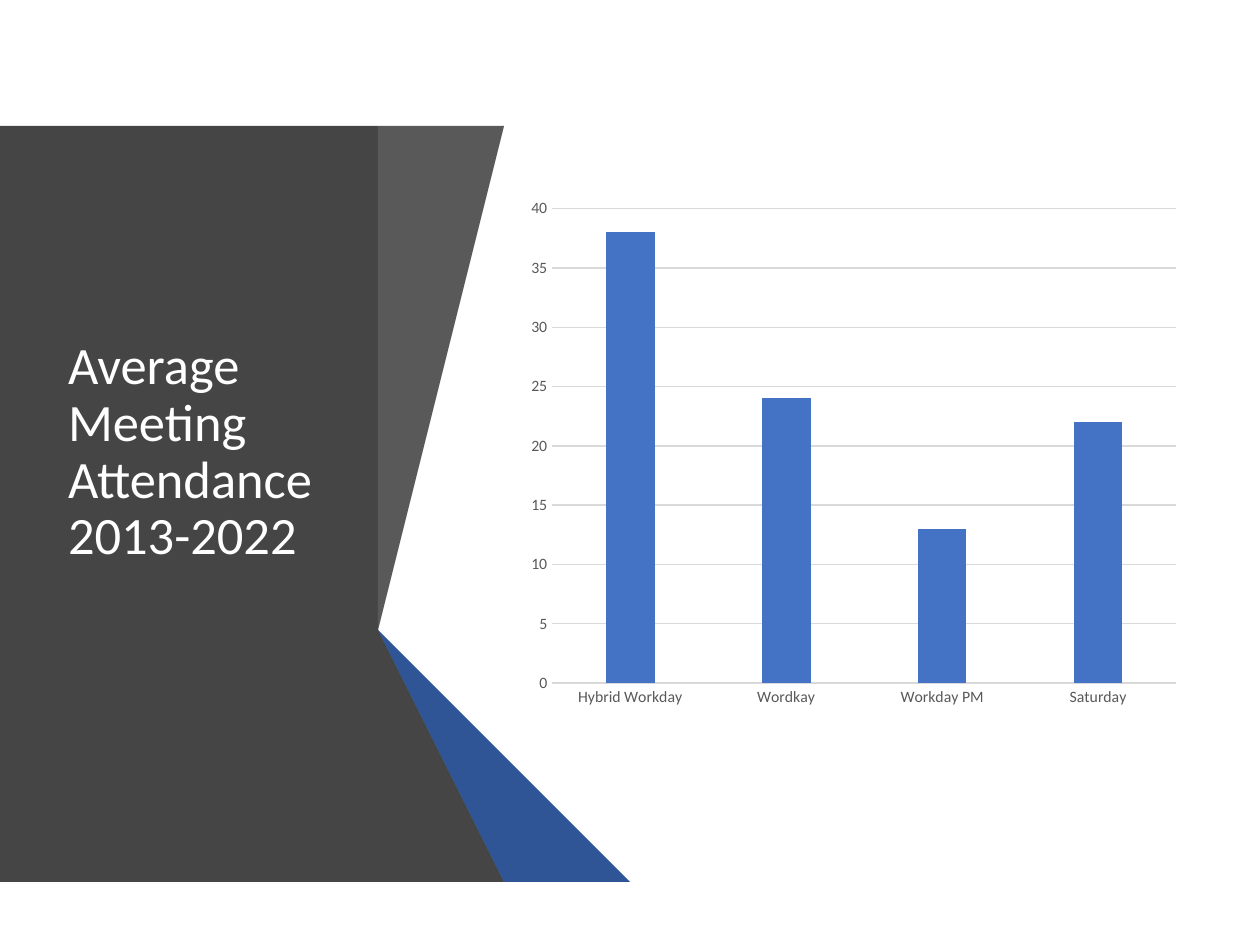
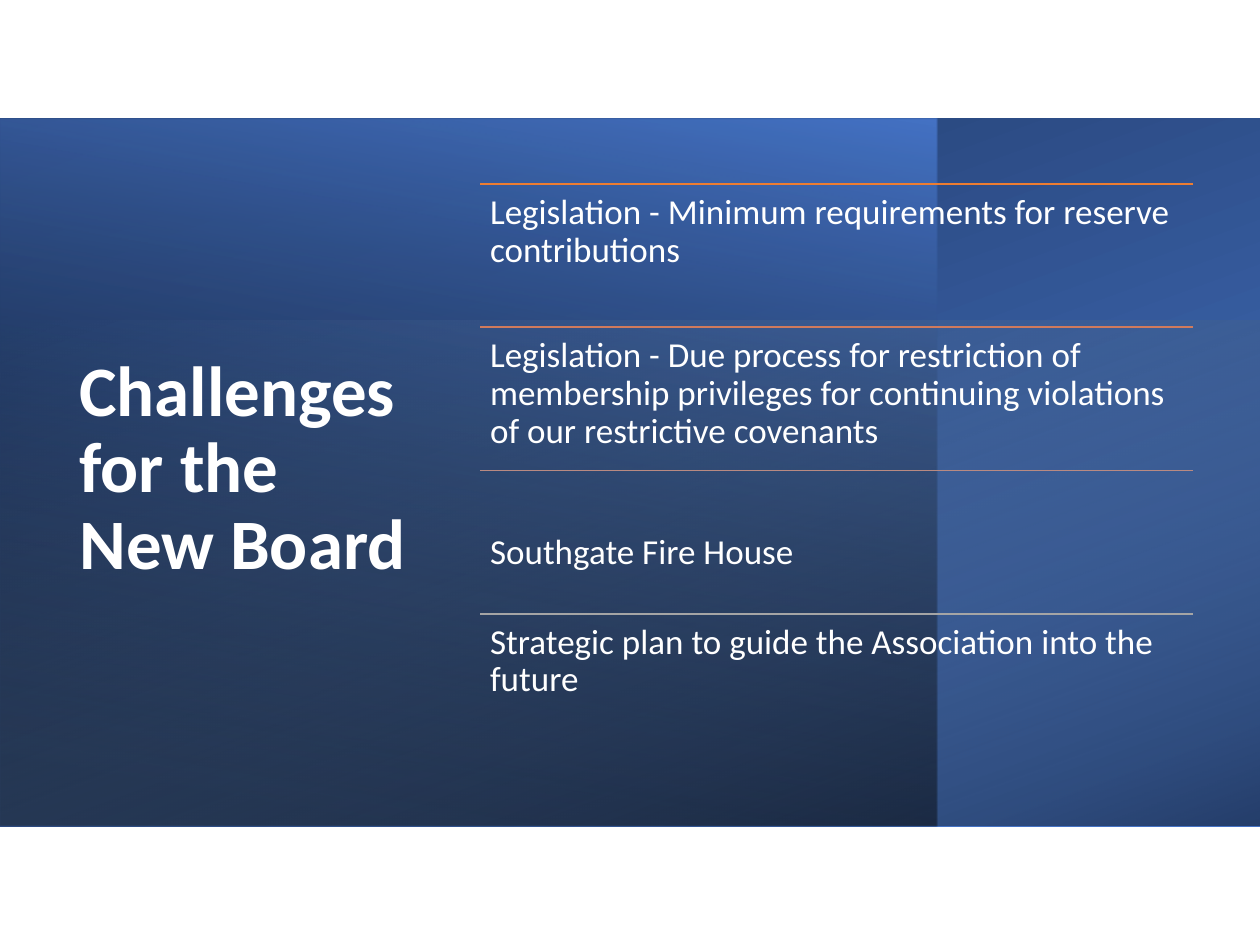
from lxml.etree import SubElement
from pptx import Presentation
from pptx.chart.data import CategoryChartData
from pptx.dml.color import RGBColor
from pptx.enum.chart import XL_CHART_TYPE, XL_TICK_MARK
from pptx.enum.shapes import MSO_CONNECTOR, MSO_SHAPE
from pptx.enum.text import MSO_ANCHOR, MSO_AUTO_SIZE, PP_ALIGN
from pptx.oxml import parse_xml
from pptx.oxml.ns import nsdecls, qn
from pptx.util import Inches, Pt

FONT = "Calibri"
WHITE = RGBColor(0xFF, 0xFF, 0xFF)
BLUE = RGBColor(0x44, 0x72, 0xC4)
NAVY = RGBColor(0x20, 0x38, 0x64)
DEEP = RGBColor(0x2F, 0x55, 0x97)
SKY = RGBColor(0x9D, 0xC3, 0xE6)
BLACK = RGBColor(0, 0, 0)
PANEL = RGBColor(0x45, 0x45, 0x45)
GRAY = RGBColor(0x59, 0x59, 0x59)
COAL = RGBColor(0x40, 0x40, 0x40)
INK = RGBColor(0x26, 0x26, 0x26)
GRID = RGBColor(0xD9, 0xD9, 0xD9)
ORANGE = RGBColor(0xED, 0x7D, 0x31)
CORAL = RGBColor(0xD1, 0x7B, 0x5C)
ROSE = RGBColor(0xB9, 0x8A, 0x82)
SILVER = RGBColor(0xA5, 0xA5, 0xA5)
TOP, LOW = 0.94, 6.56


def write(shape, text, size, bold=False, anchor=MSO_ANCHOR.TOP, pad=0.1, drop=0):
    frame = shape.text_frame
    frame.word_wrap = True
    frame.auto_size = MSO_AUTO_SIZE.NONE
    frame.vertical_anchor = anchor
    frame.margin_left = frame.margin_right = Inches(pad)
    frame.margin_bottom = Inches(min(pad, 0.08))
    frame.margin_top = Inches(min(pad, 0.08) + drop)
    frame.text = text
    para = frame.paragraphs[0]
    para.alignment = PP_ALIGN.LEFT
    para.line_spacing = 0.9
    para.font.name = FONT
    para.font.size = Pt(size)
    para.font.bold = bold
    para.font.color.rgb = WHITE


def place(slide, text, box, size, bold=False):
    title = slide.shapes.title
    title.left, title.top, title.width, title.height = [Inches(n) for n in box]
    write(title, text, size, bold=bold, anchor=MSO_ANCHOR.MIDDLE)
    slide.shapes._spTree.append(title._element)


deck = Presentation()
deck.slide_width, deck.slide_height = Inches(10), Inches(7.5)
layout = deck.slide_layouts[5]

slide = deck.slides.add_slide(layout)
bands = [
    (PANEL, [(0, TOP), (3.36, TOP), (2.67, 5.25), (3.61, LOW), (0, LOW)]),
    (BLUE, [(2.97, 5.27), (3.17, 5.31), (3.89, TOP), (3.68, TOP)]),
    (GRAY, [(3.64, TOP), (3.43, TOP), (2.72, 5.23), (2.92, 5.27)]),
    (INK, [(2.72, 5.23), (3.68, LOW), (3.73, LOW)]),
    (NAVY, [(2.97, 5.28), (4.15, LOW), (4.2, LOW)]),
    (DEEP, [(2.97, 5.27), (4.2, LOW), (4.72, LOW), (3.17, 5.31)]),
    (COAL, [(4.11, LOW), (2.92, 5.27), (2.72, 5.23), (3.73, LOW)]),
]
for color, points in bands:
    pen = slide.shapes.build_freeform(*points[0], scale=Inches(1))
    pen.add_line_segments(points[1:], close=True)
    band = pen.convert_to_shape()
    band.shadow.inherit = False
    band.fill.solid()
    band.fill.fore_color.rgb = color
    band.line.fill.background()

place(slide, "Average Meeting Attendance 2013-2022", (0.44, 1.5, 2.28, 4.19), 30)

data = CategoryChartData()
data.categories = ["Hybrid Workday", "Wordkay", "Workday PM", "Saturday"]
data.add_series("Series 1", [38, 24, 13, 22])
chart = slide.shapes.add_chart(
    XL_CHART_TYPE.COLUMN_CLUSTERED, Inches(4.11), Inches(1.5), Inches(5.33), Inches(4.19), data
).chart
chart.has_title = chart.has_legend = False
chart.font.name, chart.font.size = FONT, Pt(10)
plot = chart.plots[0]
plot.gap_width, plot.overlap = 219, -27
plot.vary_by_categories = False
bars = plot.series[0].format.fill
bars.solid()
bars.fore_color.rgb = BLUE
names, scale = chart.category_axis, chart.value_axis
for axis in (names, scale):
    axis.major_tick_mark = axis.minor_tick_mark = XL_TICK_MARK.NONE
    font = axis.tick_labels.font
    font.name, font.size = FONT, Pt(9)
    font.color.rgb = GRAY
scale.minimum_scale, scale.maximum_scale, scale.major_unit = 0, 40, 5
scale.format.line.fill.background()
for line in (names.format.line, scale.major_gridlines.format.line):
    line.color.rgb = GRID
    line.width = Pt(0.75)

slide = deck.slides.add_slide(layout)
fades = [
    ((2.19, -1.25, 5.62, 10), 270, 200, [(8, BLUE, 100), (100, NAVY, 100)]),
    ((0, TOP, 7.44, 5.62), 180, 80, [(8, BLACK, 52), (100, BLUE, 100)]),
    ((2.99, -0.45, 4.01, 10), 270, 20, [(0, SKY, 0), (100, BLACK, 46)]),
]
for box, turn, angle, stops in fades:
    fade = slide.shapes.add_shape(MSO_SHAPE.RECTANGLE, *[Inches(n) for n in box])
    fade.rotation = turn
    fade.shadow.inherit = False
    fade.line.fill.background()
    fade.fill.background()
    props = fade._element.spPr
    props.find(qn("a:xfrm")).set("flipH", "1")
    marks = "".join(
        f'<a:gs pos="{pos * 1000}"><a:srgbClr val="{color}">'
        f'<a:alpha val="{alpha * 1000}"/></a:srgbClr></a:gs>'
        for pos, color, alpha in stops
    )
    blend = parse_xml(
        f'<a:gradFill {nsdecls("a")} rotWithShape="1"><a:gsLst>{marks}</a:gsLst>'
        f'<a:lin ang="{angle * 60000}" scaled="0"/></a:gradFill>'
    )
    props.replace(props.find(qn("a:noFill")), blend)

place(slide, "Challenges for the\vNew Board", (0.53, 1.44, 2.8, 4.58), 40.5, bold=True)

goals = [
    (ORANGE, "Legislation - Minimum requirements for reserve contributions", 0),
    (CORAL, "Legislation - Due process for restriction of membership privileges "
            "for continuing violations of our restrictive covenants", 0),
    (ROSE, "Southgate Fire House", 0.43),
    (SILVER, "Strategic plan to guide the Association into the future", 0),
]
left, wide, step = Inches(3.81), Inches(5.66), 1.137
for row, (color, text, drop) in enumerate(goals):
    top = Inches(1.46 + row * step)
    rule = slide.shapes.add_connector(MSO_CONNECTOR.STRAIGHT, left, top, left + wide, top)
    rule.line.color.rgb = color
    rule.line.width = Pt(1)
    SubElement(rule._element.spPr, qn("a:effectLst"))
    goal = slide.shapes.add_textbox(left, top, wide, Inches(step))
    write(goal, text, 20, pad=0.08, drop=drop)

deck.save("out.pptx")
